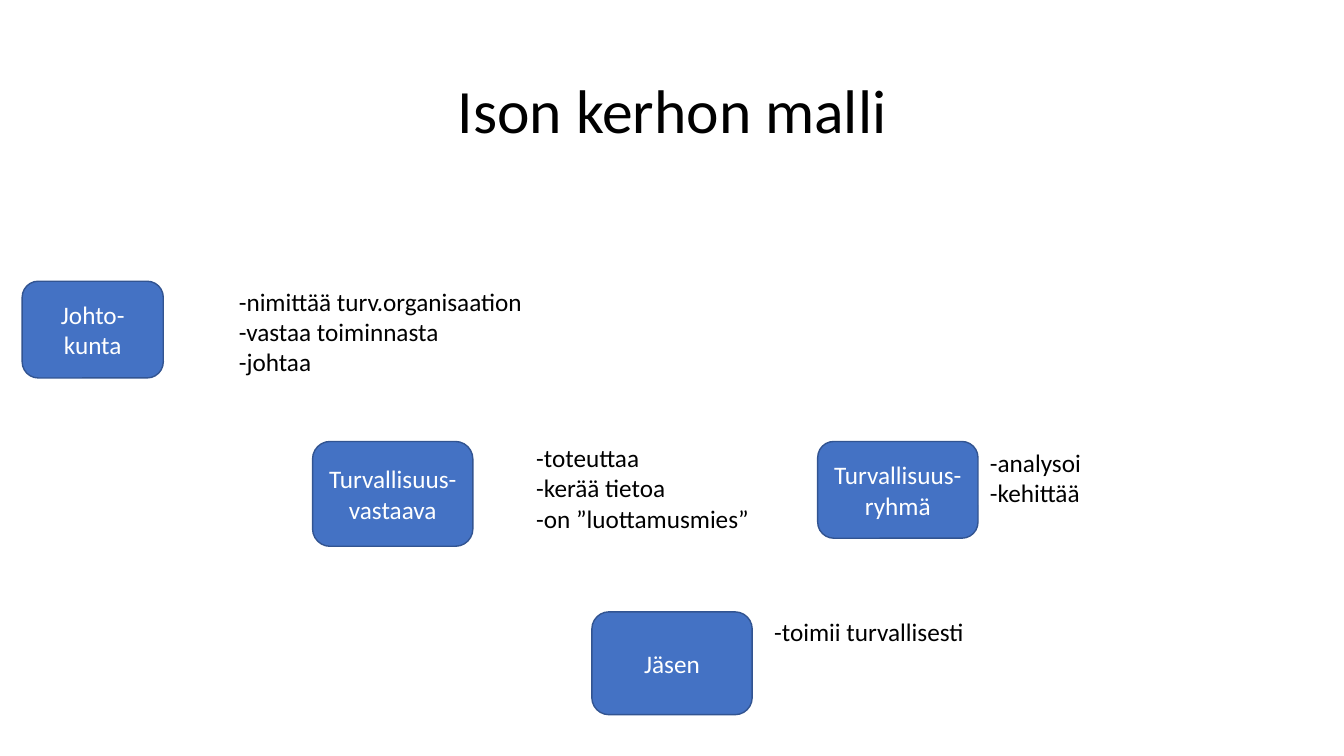
import pptx
import pptx.util
import pptx.dml.color
import pptx.enum.shapes
import pptx.enum.text

PX = 9144
ROLES = [
    ("Jäsen", (587, 607, 159, 102), (758, 607, 289, 40),
     ["-toimii turvallisesti"]),
    ("Turvallisuus-ryhmä", (811, 438, 159, 96), (972, 439, 159, 71),
     ["-analysoi", "-kehittää"]),
    ("Turvallisuus-vastaava", (310, 438, 159, 104), (522, 434, 236, 101),
     ["-toteuttaa", "-kerää tietoa", "-on ”luottamusmies”"]),
    ("Johto-kunta", (22, 279, 140, 96), (227, 279, 339, 101),
     ["-nimittää turv.organisaation", "-vastaa toiminnasta", "-johtaa"]),
]


def color(code):
    return pptx.dml.color.RGBColor.from_string(code)


def place(box):
    return [pptx.util.Emu(side * PX) for side in box]


def write(shape, lines, size=18, ink="000000", align="LEFT", anchor="TOP", space=1.0):
    frame = shape.text_frame
    frame.word_wrap = True
    frame.vertical_anchor = getattr(pptx.enum.text.MSO_ANCHOR, anchor)
    frame.text = "\n".join(lines)
    for para in frame.paragraphs:
        para.alignment = getattr(pptx.enum.text.PP_ALIGN, align)
        para.line_spacing = space
        for run in para.runs:
            run.font.name = "Calibri"
            run.font.size = pptx.util.Pt(size)
            run.font.color.rgb = color(ink)


def title(slide, box, text):
    head = slide.shapes.add_textbox(*place(box))
    write(head, [text], size=44, align="CENTER", anchor="MIDDLE", space=0.9)


def role(slide, box, name):
    kind = pptx.enum.shapes.MSO_SHAPE.ROUNDED_RECTANGLE
    card = slide.shapes.add_shape(kind, *place(box))
    card.shadow.inherit = False
    card.fill.solid()
    card.fill.fore_color.rgb = color("4472C4")
    card.line.color.rgb = color("325491")
    card.line.width = pptx.util.Pt(1)
    write(card, [name], ink="FFFFFF", align="CENTER", anchor="MIDDLE")


def duties(slide, box, lines):
    note = slide.shapes.add_textbox(*place(box))
    write(note, lines)
    note.text_frame.auto_size = pptx.enum.text.MSO_AUTO_SIZE.SHAPE_TO_FIT_TEXT


def main():
    deck = pptx.Presentation()
    deck.slide_width, deck.slide_height = place((1333, 750))
    slide = deck.slides.add_slide(deck.slide_layouts[6])
    title(slide, (92, 40, 1150, 145), "Ison kerhon malli")
    for name, card, note, lines in ROLES:
        role(slide, card, name)
        duties(slide, note, lines)
    deck.save("out.pptx")


if __name__ == "__main__":
    main()
